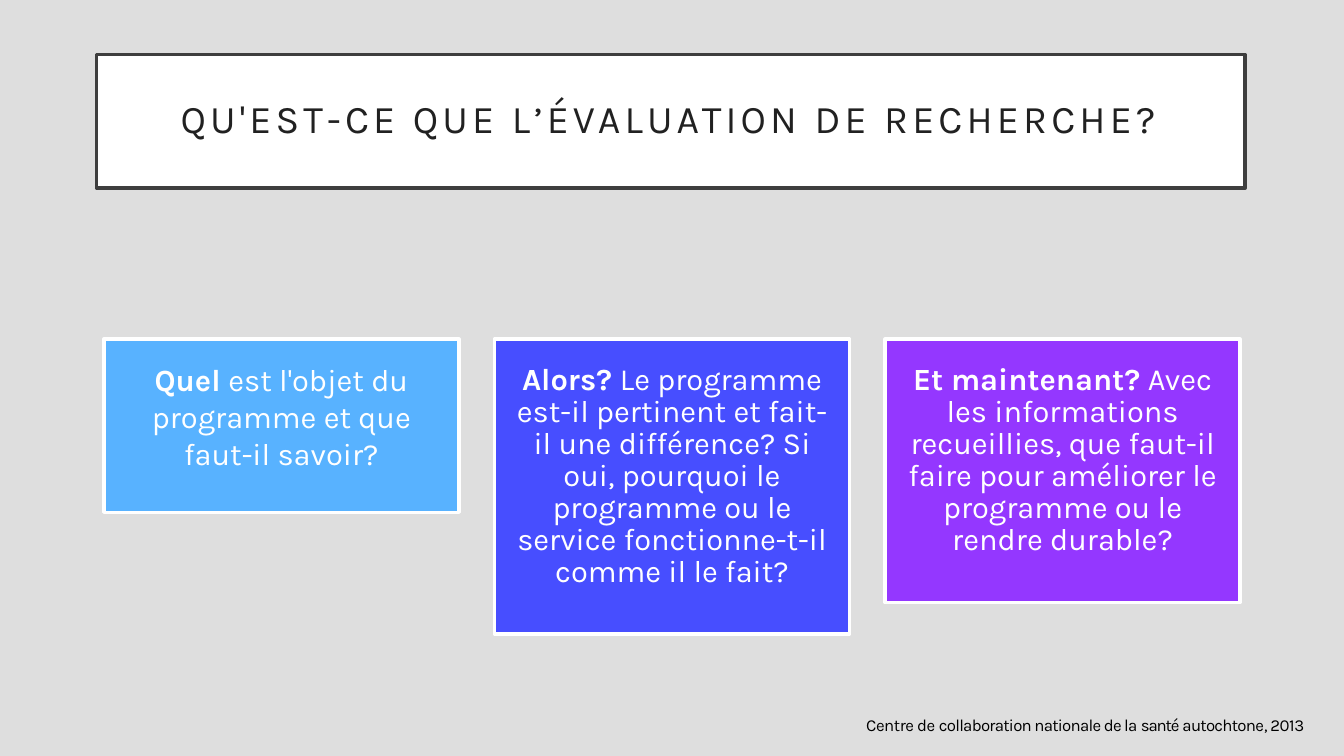
from pptx import Presentation
from pptx.dml.color import RGBColor
from pptx.enum.shapes import MSO_SHAPE
from pptx.enum.text import MSO_ANCHOR, MSO_AUTO_SIZE, PP_ALIGN
from pptx.util import Pt

PX = 9525
RECTANGLE = MSO_SHAPE.RECTANGLE
TOP = MSO_ANCHOR.TOP
NO_AUTOFIT = MSO_AUTO_SIZE.NONE
LEFT, CENTER = PP_ALIGN.LEFT, PP_ALIGN.CENTER

GREY = RGBColor(0xDE, 0xDE, 0xDE)
WHITE = RGBColor(0xFF, 0xFF, 0xFF)
BLACK = RGBColor(0x00, 0x00, 0x00)
CHARCOAL = RGBColor(0x3E, 0x3E, 0x3E)
INK = RGBColor(0x21, 0x21, 0x21)
SKY = RGBColor(0x58, 0xB2, 0xFF)
BLUE = RGBColor(0x47, 0x4E, 0xFF)
PURPLE = RGBColor(0x94, 0x37, 0xFF)


def set_frame(shape, left, top, right, align, line_spacing):
    frame = shape.text_frame
    frame.word_wrap = True
    frame.auto_size = NO_AUTOFIT
    frame.vertical_anchor = TOP
    frame.margin_left, frame.margin_top = left * PX, top * PX
    frame.margin_right, frame.margin_bottom = right * PX, 0
    paragraph = frame.paragraphs[0]
    paragraph.alignment = align
    paragraph.line_spacing = line_spacing
    paragraph.space_before = Pt(0)
    return paragraph


def add_run(paragraph, text, size, color, bold=False, spacing=0):
    run = paragraph.add_run()
    run.text = text
    run.font.name = "Karla"
    run.font.size = Pt(size)
    run.font.bold = bold
    run.font.color.rgb = color
    if spacing:
        run._r.get_or_add_rPr().set("spc", str(spacing))


prs = Presentation()
prs.slide_width, prs.slide_height = 1280 * PX, 720 * PX
slide = prs.slides.add_slide(prs.slide_layouts[5])
slide.background.fill.solid()
slide.background.fill.fore_color.rgb = GREY

title = slide.shapes.title
title.left, title.top = 92 * PX, 52 * PX
title.width, title.height = 1094 * PX, 127 * PX
title.fill.solid()
title.fill.fore_color.rgb = WHITE
title.line.color.rgb = CHARCOAL
title.line.width = Pt(2.5)
heading = set_frame(title, 80, 38, 0, LEFT, 1.0)
add_run(heading, "QU'EST-CE QUE L’ÉVALUATION DE RECHERCHE?", 28, INK, spacing=300)

questions = [
    (165, SKY, 21, 21, 1.0, "Quel ", "est l'objet du programme et que faut-il savoir?"),
    (281, BLUE, 15, 24, 0.87, "Alors? ",
     "Le programme est-il pertinent et fait-il une différence? Si oui, "
     "pourquoi le programme ou le service fonctionne-t-il comme il le fait?"),
    (251, PURPLE, 9, 24, 0.87, "Et maintenant? ",
     "Avec les informations recueillies, que faut-il faire pour améliorer "
     "le programme ou le rendre durable?"),
]
for i, (height, color, side, top, spacing, lead, detail) in enumerate(questions):
    card = slide.shapes.add_shape(
        RECTANGLE, (99 + 372 * i) * PX, 323 * PX, 338 * PX, height * PX)
    card.shadow.inherit = False
    card.fill.solid()
    card.fill.fore_color.rgb = color
    card.line.color.rgb = WHITE
    card.line.width = Pt(2.5)
    question = set_frame(card, side, top, side, CENTER, spacing)
    add_run(question, lead, 22, WHITE, bold=True)
    add_run(question, detail, 22, WHITE)

credit = slide.shapes.add_textbox(824 * PX, 680 * PX, 444 * PX, 21 * PX)
citation = set_frame(credit, 1, 1, 0, LEFT, 1.0)
for text, spacing in [
    ("Centre de ", -30),
    ("collaboration nationale de la ", -50),
    ("santé ", -80),
    ("autochtone", -50),
    (", ", -80),
    ("2013", -30),
]:
    add_run(citation, text, 12, BLACK, spacing=spacing)

prs.save("out.pptx")
